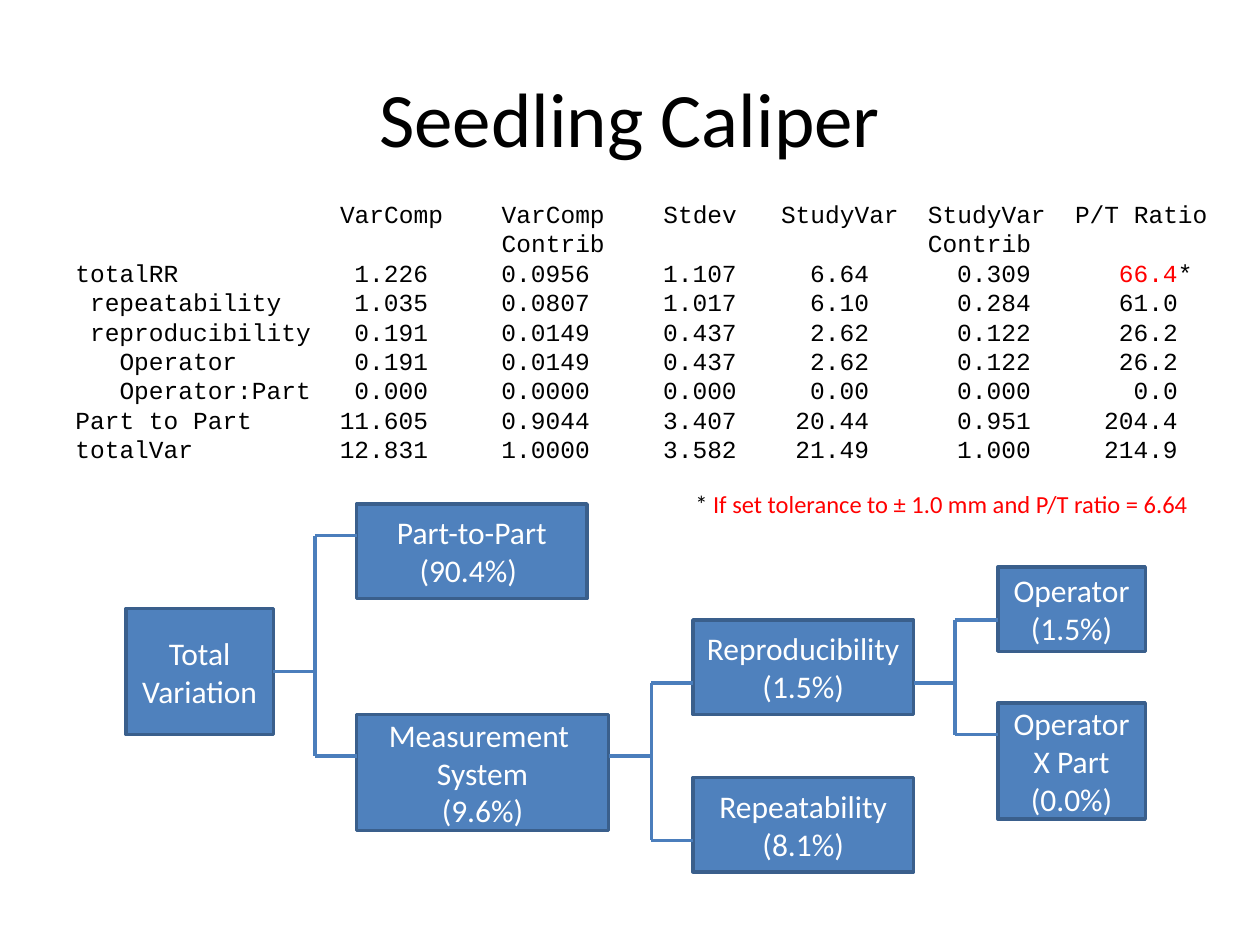
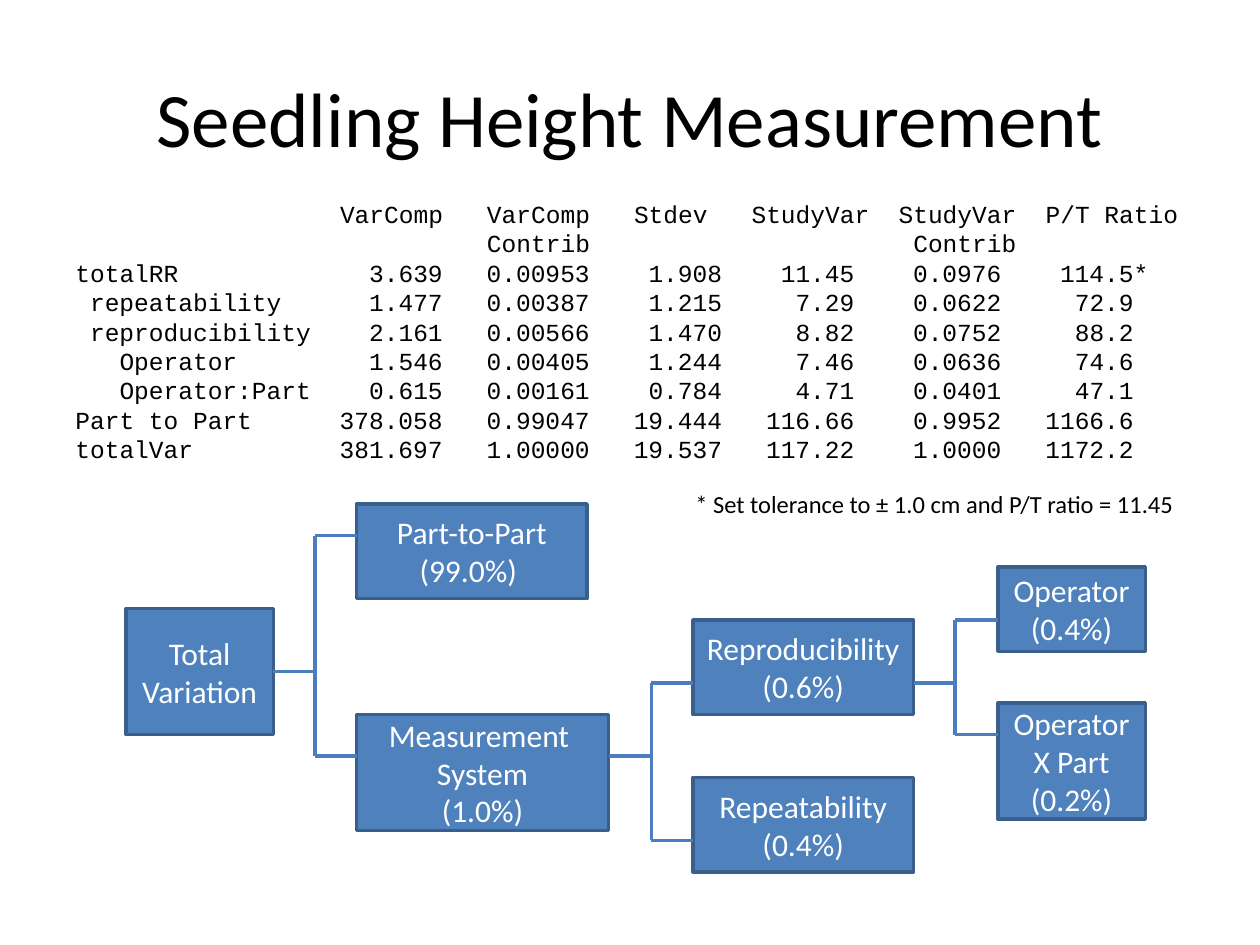
import dataclasses

import lxml.etree
import pptx
import pptx.dml.color
import pptx.enum.shapes
import pptx.enum.text
import pptx.oxml.ns
import pptx.util

Inches = pptx.util.Inches
Pt = pptx.util.Pt
PP_ALIGN = pptx.enum.text.PP_ALIGN
MSO_ANCHOR = pptx.enum.text.MSO_ANCHOR
qn = pptx.oxml.ns.qn


@dataclasses.dataclass(frozen=True)
class Theme:
    font: str = "Calibri"
    mono: str = "Courier New"
    title_size: int = 44
    box_size: int = 18
    text_size: int = 14
    line_width: int = 2
    black: str = "000000"
    white: str = "FFFFFF"
    red: str = "FF0000"
    box_fill: str = "4F81BD"
    box_line: str = "3A5F8C"
    link: str = "4B7EBC"


THEME = Theme()
CHAR_WIDTH = 0.6 * THEME.text_size / 72  # inches per Courier character

# Name: (left, top, width, height), label lines above the percentage
BOXES = {
    "total": ((1, 4.83, 1.17, 1), ["Total", "Variation"]),
    "part": ((2.83, 4, 1.83, 0.75), ["Part-to-Part"]),
    "system": ((2.83, 5.67, 2, 0.92), ["Measurement ", "System"]),
    "repeatability": ((5.5, 6.17, 1.75, 0.75), ["Repeatability"]),
    "reproducibility": ((5.5, 4.92, 1.75, 0.75), ["Reproducibility"]),
    "operator": ((7.92, 4.5, 1.17, 0.67), ["Operator"]),
    "interaction": ((7.92, 5.58, 1.17, 0.92), ["Operator", "X Part"]),
}

# Parent, height of its link, x of the trunk, {child: height of its link}
BRANCHES = [
    ("total", 5.33, 2.5, {"part": 4.25, "system": 6}),
    ("system", 6, 5.17, {"reproducibility": 5.42, "repeatability": 6.67}),
    ("reproducibility", 5.42, 7.58, {"operator": 4.92, "interaction": 5.83}),
]

# Row label and its indent in characters
ROW_LABELS = [("totalRR", 0), ("repeatability", 1), ("reproducibility", 1),
              ("Operator", 3), ("Operator:Part", 3),
              ("Part to Part", 0), ("totalVar", 0)]
HEADINGS = ["VarComp", "VarComp", "Stdev", "StudyVar", "StudyVar", "P/T Ratio"]

# Columns are counted in characters: headings start there, numbers end there
CALIPER = {
    "title": "Seedling Caliper",
    "heading_starts": [18, 29, 40, 48, 58, 68],
    "contrib_starts": [29, 58],
    "number_ends": [24, 35, 45, 54, 65, 75],
    "ratio_color": THEME.red,
    "rows": [
        ["1.226", "0.0956", "1.107", "6.64", "0.309", "66.4*"],
        ["1.035", "0.0807", "1.017", "6.10", "0.284", "61.0"],
        ["0.191", "0.0149", "0.437", "2.62", "0.122", "26.2"],
        ["0.191", "0.0149", "0.437", "2.62", "0.122", "26.2"],
        ["0.000", "0.0000", "0.000", "0.00", "0.000", "0.0"],
        ["11.605", "0.9044", "3.407", "20.44", "0.951", "204.4"],
        ["12.831", "1.0000", "3.582", "21.49", "1.000", "214.9"],
    ],
    "shares": {"part": "(90.4%) ", "system": "(9.6%)", "repeatability": "(8.1%)",
               "reproducibility": "(1.5%)", "operator": "(1.5%)",
               "interaction": "(0.0%)"},
    "note": [("* ", THEME.black),
             ("If set tolerance to ± 1.0 mm and P/T ratio = 6.64", THEME.red)],
    "note_width": 4.14,
}
HEIGHT = {
    "title": "Seedling Height Measurement",
    "heading_starts": [18, 28, 38, 46, 56, 66],
    "contrib_starts": [28, 57],
    "number_ends": [25, 35, 44, 53, 63, 72],
    "ratio_color": THEME.black,
    "rows": [
        ["3.639", "0.00953", "1.908", "11.45", "0.0976", "114.5*"],
        ["1.477", "0.00387", "1.215", "7.29", "0.0622", "72.9"],
        ["2.161", "0.00566", "1.470", "8.82", "0.0752", "88.2"],
        ["1.546", "0.00405", "1.244", "7.46", "0.0636", "74.6"],
        ["0.615", "0.00161", "0.784", "4.71", "0.0401", "47.1"],
        ["378.058", "0.99047", "19.444", "116.66", "0.9952", "1166.6"],
        ["381.697", "1.00000", "19.537", "117.22", "1.0000", "1172.2"],
    ],
    "shares": {"part": "(99.0%) ", "system": "(1.0%)", "repeatability": "(0.4%)",
               "reproducibility": "(0.6%)", "operator": "(0.4%)",
               "interaction": "(0.2%)"},
    "note": [("* Set tolerance to ± 1.0 cm and P/T ratio = 11.45", THEME.black)],
    "note_width": 4.03,
}


def rgb(color):
    return pptx.dml.color.RGBColor.from_string(color)


def add_run(p, text, size, color=THEME.black, font=THEME.font):
    r = p.add_run()
    r.text = text
    r.font.size = Pt(size)
    r.font.name = font
    r.font.color.rgb = rgb(color)


def next_paragraph(tf):
    """Return the empty first paragraph, or a new one after the last."""
    return tf.add_paragraph() if tf.paragraphs[0].runs else tf.paragraphs[0]


def add_title(slide, text):
    sp = slide.shapes.title
    sp.left, sp.top, sp.width, sp.height = map(Inches, (0.5, 0.3, 9, 1.25))
    sp.text_frame.vertical_anchor = MSO_ANCHOR.MIDDLE
    p = sp.text_frame.paragraphs[0]
    p.alignment = PP_ALIGN.CENTER
    add_run(p, text, THEME.title_size)


def add_text_box(slide, at, wrap):
    tf = slide.shapes.add_textbox(*map(Inches, at)).text_frame
    tf.word_wrap = wrap
    tf.auto_size = pptx.enum.text.MSO_AUTO_SIZE.SHAPE_TO_FIT_TEXT
    return tf


def set_tab_stops(p, stops):
    """Stops are pairs of a column in characters and 'l' or 'r'."""
    tabs = lxml.etree.SubElement(p._p.get_or_add_pPr(), qn("a:tabLst"))
    for column, align in stops:
        lxml.etree.SubElement(tabs, qn("a:tab"), algn=align,
                              pos=str(Inches(column * CHAR_WIDTH)))


def add_heading_line(tf, words, starts):
    p = next_paragraph(tf)
    set_tab_stops(p, [(start, "l") for start in starts])
    add_run(p, "".join("\t" + word for word in words), THEME.text_size,
            font=THEME.mono)


def add_number_line(tf, label, indent, numbers, ends, ratio_color):
    """Right-align the numbers; a trailing asterisk hangs past its column."""
    p = next_paragraph(tf)
    stops = [(indent, "l")] if indent else []
    stops += [(end + number.count("*"), "r") for number, end in zip(numbers, ends)]
    set_tab_stops(p, stops)
    start = "\t" + label if indent else label
    *others, ratio = numbers
    add_run(p, "\t".join([start, *others, ""]), THEME.text_size, font=THEME.mono)
    if ratio.endswith("*"):
        add_run(p, ratio[:-1], THEME.text_size, ratio_color, THEME.mono)
        add_run(p, "*", THEME.text_size, font=THEME.mono)
    else:
        add_run(p, ratio, THEME.text_size, font=THEME.mono)


def add_variance_listing(slide, study):
    tf = add_text_box(slide, (0.5, 1.53, 9.25, 2.22), True)
    add_heading_line(tf, HEADINGS, study["heading_starts"])
    add_heading_line(tf, ["Contrib"] * 2, study["contrib_starts"])
    for (label, indent), numbers in zip(ROW_LABELS, study["rows"]):
        add_number_line(tf, label, indent, numbers, study["number_ends"],
                        study["ratio_color"])


def add_box(shapes, at, lines):
    sp = shapes.add_shape(pptx.enum.shapes.MSO_SHAPE.RECTANGLE, *map(Inches, at))
    sp.shadow.inherit = False
    sp.fill.solid()
    sp.fill.fore_color.rgb = rgb(THEME.box_fill)
    sp.line.color.rgb = rgb(THEME.box_line)
    sp.line.width = Pt(THEME.line_width)
    tf = sp.text_frame
    tf.word_wrap = True
    tf.vertical_anchor = MSO_ANCHOR.MIDDLE
    for line in lines:
        p = next_paragraph(tf)
        p.alignment = PP_ALIGN.CENTER
        add_run(p, line, THEME.box_size, THEME.white)
    return sp


def add_link(shapes, x1, y1, x2, y2):
    link = shapes.add_connector(pptx.enum.shapes.MSO_CONNECTOR.STRAIGHT,
                                *map(Inches, (x1, y1, x2, y2)))
    link.line.color.rgb = rgb(THEME.link)
    link.line.width = Pt(THEME.line_width)
    lxml.etree.SubElement(link._element.spPr, qn("a:effectLst"))
    return link


def add_variation_tree(slide, shares):
    shapes = slide.shapes.add_group_shape().shapes
    boxes = {}
    for name, (at, label) in BOXES.items():
        share = [shares[name]] if name in shares else []
        boxes[name] = add_box(shapes, at, label + share)
    for parent, y, trunk, children in BRANCHES:
        left, top, width, height = BOXES[parent][0]
        add_link(shapes, trunk, min(children.values()),
                 trunk, max(children.values()))
        link = add_link(shapes, left + width, y, trunk, y)
        if abs(top + height / 2 - y) < 0.01:
            link.begin_connect(boxes[parent], 3)
        for child, child_y in children.items():
            add_link(shapes, trunk, child_y, BOXES[child][0][0], child_y)


def add_note(slide, runs, width):
    tf = add_text_box(slide, (5.42, 3.83, width, 0.34), False)
    for text, color in runs:
        add_run(tf.paragraphs[0], text, THEME.text_size, color)


def main():
    prs = pptx.Presentation()
    prs.slide_width, prs.slide_height = Inches(10), Inches(7.5)
    title_only = prs.slide_layouts[5]
    for study in (CALIPER, HEIGHT):
        slide = prs.slides.add_slide(title_only)
        add_title(slide, study["title"])
        add_variance_listing(slide, study)
        add_variation_tree(slide, study["shares"])
        add_note(slide, study["note"], study["note_width"])
    prs.save("out.pptx")


if __name__ == "__main__":
    main()
